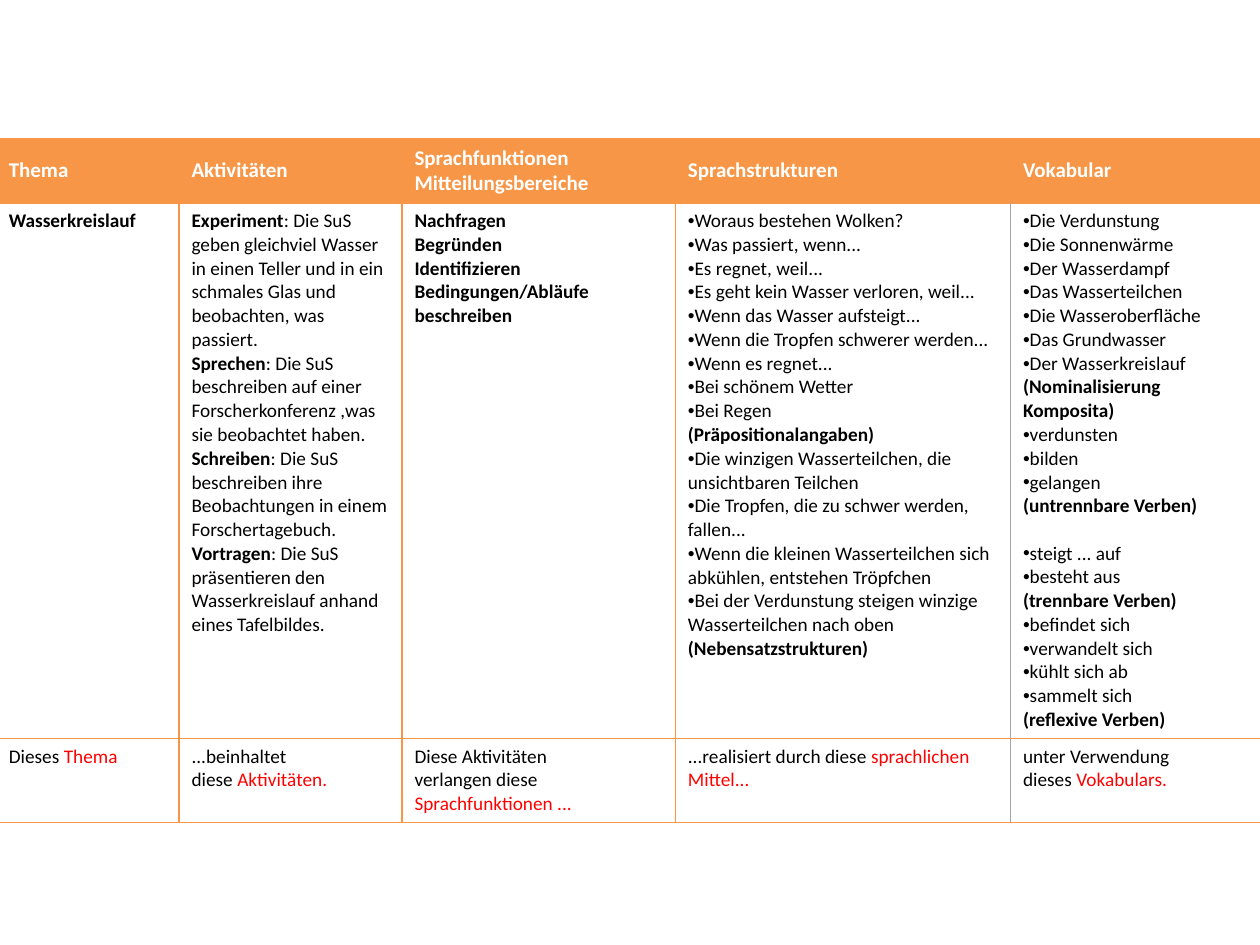
from dataclasses import dataclass

from lxml.etree import SubElement
from pptx import Presentation
from pptx.dml.color import RGBColor as Color
from pptx.enum.text import MSO_ANCHOR as Anchor
from pptx.oxml.ns import qn
from pptx.util import Inches, Pt


@dataclass(frozen=True)
class Theme:
    font: str = "Calibri"
    header_size: int = 12
    body_size: int = 11
    orange: str = "F79646"
    grey: str = "A6A6A6"
    white: str = "FFFFFF"
    black: str = "000000"
    red: str = "FF0000"
    border: float = 1
    thin_border: float = 0.5


THEME = Theme()
GRID_COLUMNS, GRID_ROWS = 1000, 750
COLUMN_WIDTHS = [145, 177, 217, 266, 202]
ROW_HEIGHTS = [51, 425, 67]
BULLET, GAP, MARK = "•", "^", "*"

HEADERS = [
    ["Thema"],
    ["Aktivitäten"],
    ["Sprachfunktionen", "Mitteilungsbereiche"],
    ["Sprachstrukturen"],
    ["Vokabular"],
]
CONTENT = [
    ["*Wasserkreislauf*"],
    [
        "*Experiment*: Die SuS geben gleichviel Wasser in einen Teller und in ein "
        "schmales Glas und beobachten, was passiert.",
        "*Sprechen*: Die SuS beschreiben auf einer Forscherkonferenz ,was sie "
        "beobachtet haben.",
        "*Schreiben*: Die SuS beschreiben ihre Beobachtungen in einem Forschertagebuch.",
        "*Vortragen*: Die SuS präsentieren den Wasserkreislauf anhand eines Tafelbildes.",
    ],
    [
        "*Nachfragen*",
        "*Begründen*",
        "*Identifizieren*",
        "*Bedingungen/Abläufe beschreiben*",
    ],
    [
        "•Woraus bestehen Wolken?",
        "•Was passiert, wenn...",
        "•Es regnet, weil...",
        "•Es geht kein Wasser verloren, weil...",
        "•Wenn das Wasser aufsteigt...",
        "•Wenn die Tropfen schwerer werden...",
        "•Wenn es regnet...",
        "•Bei schönem Wetter",
        "•Bei Regen",
        "*(Präpositionalangaben)*",
        "•Die winzigen Wasserteilchen, die unsichtbaren Teilchen",
        "•Die Tropfen, die zu schwer werden, fallen...",
        "•Wenn die kleinen Wasserteilchen sich abkühlen, entstehen Tröpfchen",
        "•Bei der Verdunstung steigen winzige Wasserteilchen nach oben",
        "*(Nebensatzstrukturen)*",
    ],
    [
        "•Die Verdunstung",
        "•Die Sonnenwärme",
        "•Der Wasserdampf",
        "•Das Wasserteilchen",
        "•Die Wasseroberfläche",
        "•Das Grundwasser",
        "•Der Wasserkreislauf",
        "*(Nominalisierung*",
        "*Komposita)*",
        "•verdunsten",
        "•bilden",
        "•gelangen",
        "*(untrennbare Verben)*",
        "^•steigt ... auf",
        "•besteht aus",
        "*(trennbare Verben)*",
        "•befindet sich",
        "•verwandelt sich",
        "•kühlt sich ab",
        "•sammelt sich",
        "*(reflexive Verben)*",
    ],
]
SUMMARY = [
    ["Dieses *Thema*"],
    ["...beinhaltet", "diese *Aktivitäten.*"],
    ["Diese Aktivitäten", "verlangen diese *Sprachfunktionen ...*"],
    ["...realisiert durch diese *sprachlichen Mittel...*"],
    ["unter Verwendung", "dieses *Vokabulars.*"],
]


def write_text(frame, lines, size, color, bold=False, marked_bold=False, marked_color=None):
    frame.word_wrap = True
    for index, line in enumerate(lines):
        paragraph = frame.paragraphs[0] if index == 0 else frame.add_paragraph()
        if line.startswith(GAP):
            paragraph.space_before = Pt(size * 1.22)
            line = line.removeprefix(GAP)
        if line.startswith(BULLET):
            properties = paragraph._p.get_or_add_pPr()
            properties.set("marL", "0")
            properties.set("indent", "0")
            SubElement(properties, qn("a:buFont")).set("typeface", "Arial")
            SubElement(properties, qn("a:buChar")).set("char", BULLET)
            line = line.removeprefix(BULLET)
        for position, part in enumerate(line.split(MARK)):
            if not part:
                continue
            marked = position % 2 == 1
            run = paragraph.add_run()
            run.text = part
            run.font.name = THEME.font
            run.font.size = Pt(size)
            run.font.bold = bold or (marked and marked_bold)
            run.font.color.rgb = Color.from_string(marked_color if marked and marked_color else color)


class SlideBuilder:
    def __init__(self, presentation, theme):
        self.theme = theme
        self.width = presentation.slide_width
        self.height = presentation.slide_height
        self.slide = presentation.slides.add_slide(presentation.slide_layouts[6])

    def across(self, columns):
        return round(self.width * columns / GRID_COLUMNS)

    def down(self, rows):
        return round(self.height * rows / GRID_ROWS)

    def table(self, left, top, widths, heights):
        shape = self.slide.shapes.add_table(
            len(heights), len(widths), self.across(left), self.down(top),
            self.across(sum(widths)), self.down(sum(heights)))
        table = shape.table
        table.first_row = table.horz_banding = False
        for column, width in zip(table.columns, widths):
            column.width = self.across(width)
        for row, height in zip(table.rows, heights):
            row.height = self.down(height)
        return table

    def borders(self, cell, thin_sides=()):
        properties = cell._tc.get_or_add_tcPr()
        for side in ("lnL", "lnR", "lnT", "lnB"):
            thin = side in thin_sides
            line = SubElement(properties, qn(f"a:{side}"))
            line.set("w", str(Pt(self.theme.thin_border if thin else self.theme.border)))
            fill = SubElement(line, qn("a:solidFill"))
            color = self.theme.grey if thin else self.theme.orange
            SubElement(fill, qn("a:srgbClr")).set("val", color)

    def table_row(self, table, row, texts, fill=None, anchor=Anchor.TOP, thin_after=None, **style):
        for column, lines in enumerate(texts):
            cell = table.cell(row, column)
            thin_sides = {thin_after: ("lnR",), thin_after + 1: ("lnL",)} if thin_after else {}
            self.borders(cell, thin_sides.get(column, ()))
            cell.vertical_anchor = anchor
            if fill:
                cell.fill.solid()
                cell.fill.fore_color.rgb = Color.from_string(fill)
            else:
                cell.fill.background()
            write_text(cell.text_frame, lines, **style)


def main():
    presentation = Presentation()
    presentation.slide_width, presentation.slide_height = Inches(10), Inches(7.5)
    builder = SlideBuilder(presentation, THEME)
    table = builder.table(-3, 110, COLUMN_WIDTHS, ROW_HEIGHTS)
    body = dict(size=THEME.body_size, color=THEME.black, thin_after=3)
    builder.table_row(table, 0, HEADERS, fill=THEME.orange, anchor=Anchor.MIDDLE,
                      size=THEME.header_size, color=THEME.white, bold=True)
    builder.table_row(table, 1, CONTENT, marked_bold=True, **body)
    builder.table_row(table, 2, SUMMARY, marked_color=THEME.red, **body)
    presentation.save("out.pptx")


if __name__ == "__main__":
    main()
